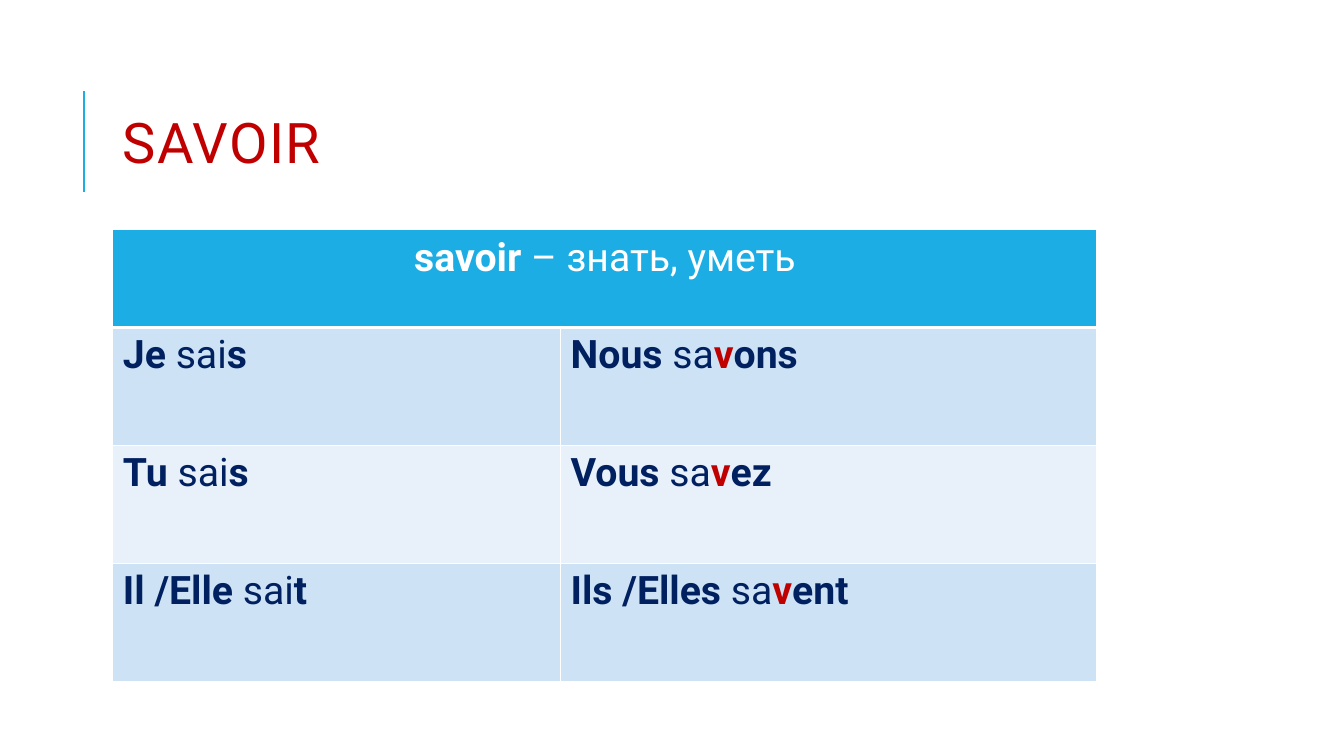
import pptx
import pptx.dml.color
import pptx.enum.shapes
import pptx.enum.text
import pptx.oxml
import pptx.oxml.ns
import pptx.util

WHITE = pptx.dml.color.RGBColor(0xFF, 0xFF, 0xFF)
BLUE = pptx.dml.color.RGBColor(0x1C, 0xAD, 0xE4)
NAVY = pptx.dml.color.RGBColor(0x00, 0x20, 0x60)
RED = pptx.dml.color.RGBColor(0xC0, 0x00, 0x00)
BANDS = (
    pptx.dml.color.RGBColor(0xCD, 0xE3, 0xF5),
    pptx.dml.color.RGBColor(0xE8, 0xF1, 0xFA),
)
CENTER = pptx.enum.text.PP_ALIGN.CENTER
LEFT = pptx.enum.text.PP_ALIGN.LEFT

CONJUGATION = [
    [("Je ", "sai", "", "s"), ("Nous ", "sa", "v", "ons")],
    [("Tu ", "sai", "", "s"), ("Vous ", "sa", "v", "ez")],
    [("Il /Elle ", "sai", "", "t"), ("Ils /Elles ", "sa", "v", "ent")],
]


class SlideBuilder:
    font_name = "Roboto"
    grid_columns = 160
    grid_rows = 90

    def __init__(self, deck):
        self.deck = deck
        self.slide = deck.slides.add_slide(deck.slide_layouts[6])

    def across(self, columns):
        return round(self.deck.slide_width * columns / self.grid_columns)

    def down(self, rows):
        return round(self.deck.slide_height * rows / self.grid_rows)

    def place(self, left, top, width, height):
        return self.across(left), self.down(top), self.across(width), self.down(height)

    def add_span(self, para, text, size, color, bold=False):
        span = para.add_run()
        span.text = text
        style = {"name": self.font_name, "size": pptx.util.Pt(size), "bold": bold}
        for name, value in style.items():
            setattr(span.font, name, value)
        span.font.color.rgb = color
        return span

    def add_rule(self, column, top, bottom):
        rule = self.slide.shapes.add_connector(
            pptx.enum.shapes.MSO_CONNECTOR.STRAIGHT,
            self.across(column), self.down(bottom), self.across(column), self.down(top),
        )
        rule.line.color.rgb = BLUE
        rule.line.width = pptx.util.Pt(1.5)
        pptx.oxml.ns.qn("a:effectLst")
        rule._element.spPr.append(
            pptx.oxml.parse_xml(f'<a:effectLst {pptx.oxml.ns.nsdecls("a")}/>')
        )

    def add_title(self, text, *area):
        box = self.slide.shapes.add_textbox(*self.place(*area))
        frame_style = {
            "word_wrap": True,
            "vertical_anchor": pptx.enum.text.MSO_ANCHOR.MIDDLE,
        }
        for name, value in frame_style.items():
            setattr(box.text_frame, name, value)
        para = box.text_frame.paragraphs[0]
        para.line_spacing = 0.8
        span = self.add_span(para, text, 40, RED)
        span._r.get_or_add_rPr().set("spc", "100")

    def add_table(self, left, top, column_widths, row_heights):
        area = self.place(left, top, sum(column_widths), sum(row_heights))
        table = self.slide.shapes.add_table(
            len(row_heights), len(column_widths), *area
        ).table
        for column, width in zip(table.columns, column_widths):
            column.width = self.across(width)
        for row, height in zip(table.rows, row_heights):
            row.height = self.down(height)
        return table

    def style_cell(self, cell, fill, top_width=1, bottom_width=1):
        properties = cell._tc.get_or_add_tcPr()
        borders = {"L": 1, "R": 1, "T": top_width, "B": bottom_width}
        for side, points in borders.items():
            properties.append(pptx.oxml.parse_xml(
                f'<a:ln{side} {pptx.oxml.ns.nsdecls("a")} w="{pptx.util.Pt(points)}">'
                f'<a:solidFill><a:srgbClr val="{WHITE}"/></a:solidFill></a:ln{side}>'
            ))
        cell.fill.solid()
        cell.fill.fore_color.rgb = fill

    def fill_cell(self, cell, spans, alignment=LEFT):
        para = cell.text_frame.paragraphs[0]
        para.alignment = alignment
        for text, color, bold in spans:
            if text:
                self.add_span(para, text, 28, color, bold)


def main():
    deck = pptx.Presentation()
    deck.slide_width = pptx.util.Inches(13.33)
    deck.slide_height = pptx.util.Inches(7.5)
    builder = SlideBuilder(deck)

    builder.add_rule(10, 10.8, 22.8)
    builder.add_title("SAVOIR", 13.44, 7.68, 127.6, 19.68)

    table = builder.add_table(13.44, 27.36, [53.3, 63.86], [11.64] + [14.04] * 3)
    heading = table.cell(0, 0)
    heading.merge(table.cell(0, 1))
    for cell in table.rows[0].cells:
        builder.style_cell(cell, BLUE, bottom_width=3)
    heading_spans = [("savoir ", WHITE, True), ("– знать, уметь", WHITE, False)]
    builder.fill_cell(heading, heading_spans, CENTER)

    for row, forms in enumerate(CONJUGATION, start=1):
        for column, (pronoun, stem, accent, ending) in enumerate(forms):
            cell = table.cell(row, column)
            builder.style_cell(cell, BANDS[(row - 1) % 2], top_width=3 if row == 1 else 1)
            builder.fill_cell(cell, [
                (pronoun, NAVY, True),
                (stem, NAVY, False),
                (accent, RED, True),
                (ending, NAVY, True),
            ])

    deck.save("out.pptx")


if __name__ == "__main__":
    main()
